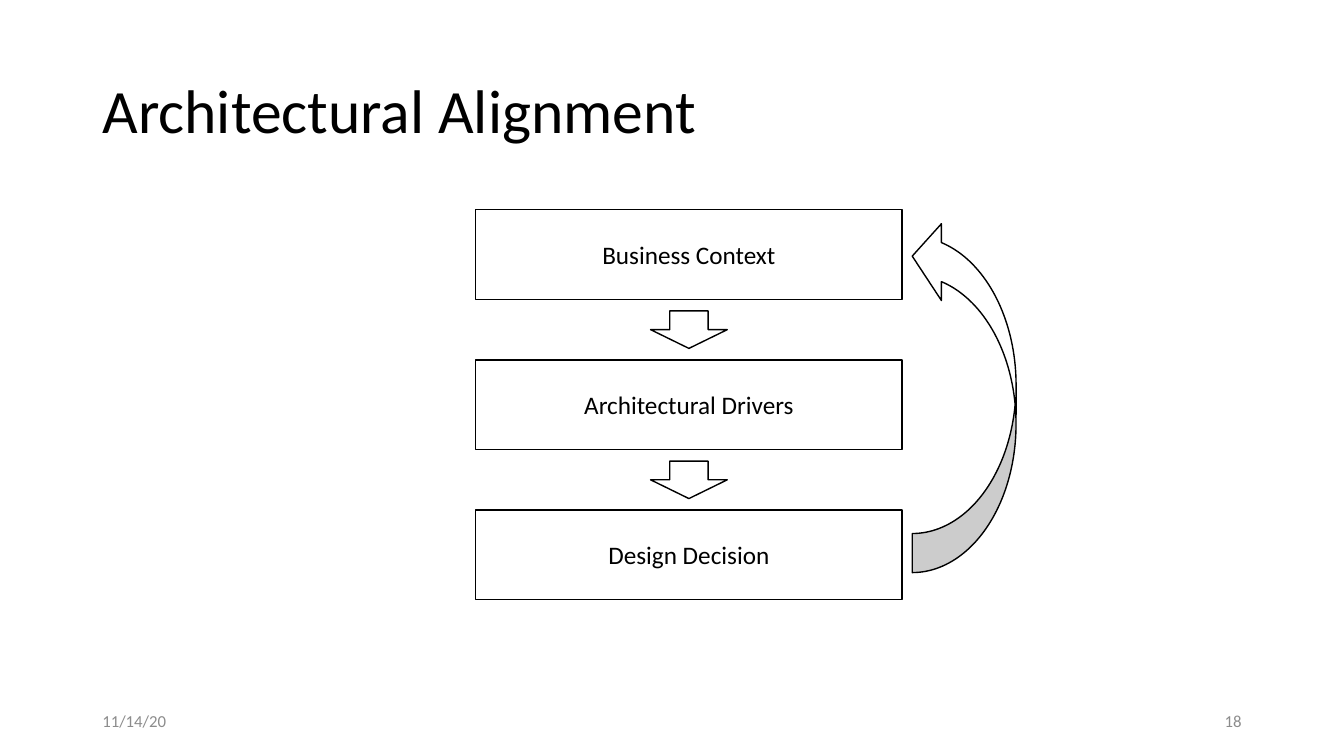
import pptx
import pptx.dml.color
import pptx.enum.shapes
import pptx.enum.text
import pptx.util
from dataclasses import dataclass

ALIGN = pptx.enum.text.PP_ALIGN
SHAPE = pptx.enum.shapes.MSO_SHAPE
CELL = pptx.util.Inches(1 / 12)  # the slide is a grid of 160 columns by 90 rows


@dataclass(frozen=True)
class Theme:
    font: str = "Calibri"
    ink: str = "000000"
    paper: str = "FFFFFF"
    muted: str = "8C8C8C"
    head: int = 44
    body: int = 18
    small: int = 12
    rule: int = 1


THEME = Theme()


def tone(code):
    return pptx.dml.color.RGBColor.from_string(code)


def span(box):
    """Turn columns and rows into slide lengths."""
    return [round(part * CELL) for part in box]


def write(shape, text, size, color, align):
    frame = shape.text_frame
    frame.text = text
    frame.word_wrap = True
    frame.vertical_anchor = pptx.enum.text.MSO_ANCHOR.MIDDLE
    para = frame.paragraphs[0]
    para.alignment = align
    style = {"name": THEME.font, "size": pptx.util.Pt(size)}
    for key, value in style.items():
        setattr(para.font, key, value)
    para.font.color.rgb = tone(color)
    return para


def draw(slide, kind, box):
    shape = slide.shapes.add_shape(kind, *span(box))
    shape.shadow.inherit = False
    shape.fill.solid()
    shape.fill.fore_color.rgb = tone(THEME.paper)
    shape.line.color.rgb = tone(THEME.ink)
    shape.line.width = pptx.util.Pt(THEME.rule)
    return shape


def add_title(slide, box, text):
    title = slide.shapes.title
    for key, value in zip(("left", "top", "width", "height"), span(box)):
        setattr(title, key, value)
    para = write(title, text, THEME.head, THEME.ink, ALIGN.LEFT)
    para.line_spacing = 0.9


def add_foot(slide, box, date, number):
    left, top, width, height = box
    part = 36
    notes = ((left, date, ALIGN.LEFT), (left + width - part, number, ALIGN.RIGHT))
    for x, text, align in notes:
        note = slide.shapes.add_textbox(*span((x, top, part, height)))
        write(note, text, THEME.small, THEME.muted, align)


def add_flow(slide, box, steps):
    """Stack the steps evenly, with a down arrow centred in each gap."""
    left, top, width, height = box
    tall = 0.23 * height
    pitch = (height - tall) / (len(steps) - 1)
    gap = pitch - tall
    for row, step in enumerate(steps):
        y = top + row * pitch
        block = draw(slide, SHAPE.RECTANGLE, (left, y, width, tall))
        write(block, step, THEME.body, THEME.ink, ALIGN.CENTER)
    wide, high = 0.18 * width, 0.62 * gap
    for row in range(len(steps) - 1):
        y = top + row * pitch + tall + (gap - high) / 2
        draw(slide, SHAPE.DOWN_ARROW, (left + (width - wide) / 2, y, wide, high))


def add_loop(slide, box):
    """Curve an arrow from the last step back up to the first."""
    loop = draw(slide, SHAPE.CURVED_RIGHT_ARROW, box)
    loop.rotation = 180
    for index, value in enumerate((0.376, 0.74, 0.281)):
        loop.adjustments[index] = value


def main():
    deck = pptx.Presentation()
    deck.slide_width, deck.slide_height = span((160, 90))
    slide = deck.slides.add_slide(deck.slide_layouts[5])
    add_title(slide, (11, 4.8, 138, 17.4), "Architectural Alignment")
    add_foot(slide, (11, 83.4, 138, 4.8), "11/14/20", "18")
    steps = ("Business Context", "Architectural Drivers", "Design Decision")
    add_flow(slide, (56.64, 24.96, 50.76, 46.44), steps)
    add_loop(slide, (108.6, 25.92, 12.36, 42.24))
    deck.save("out.pptx")


if __name__ == "__main__":
    main()
